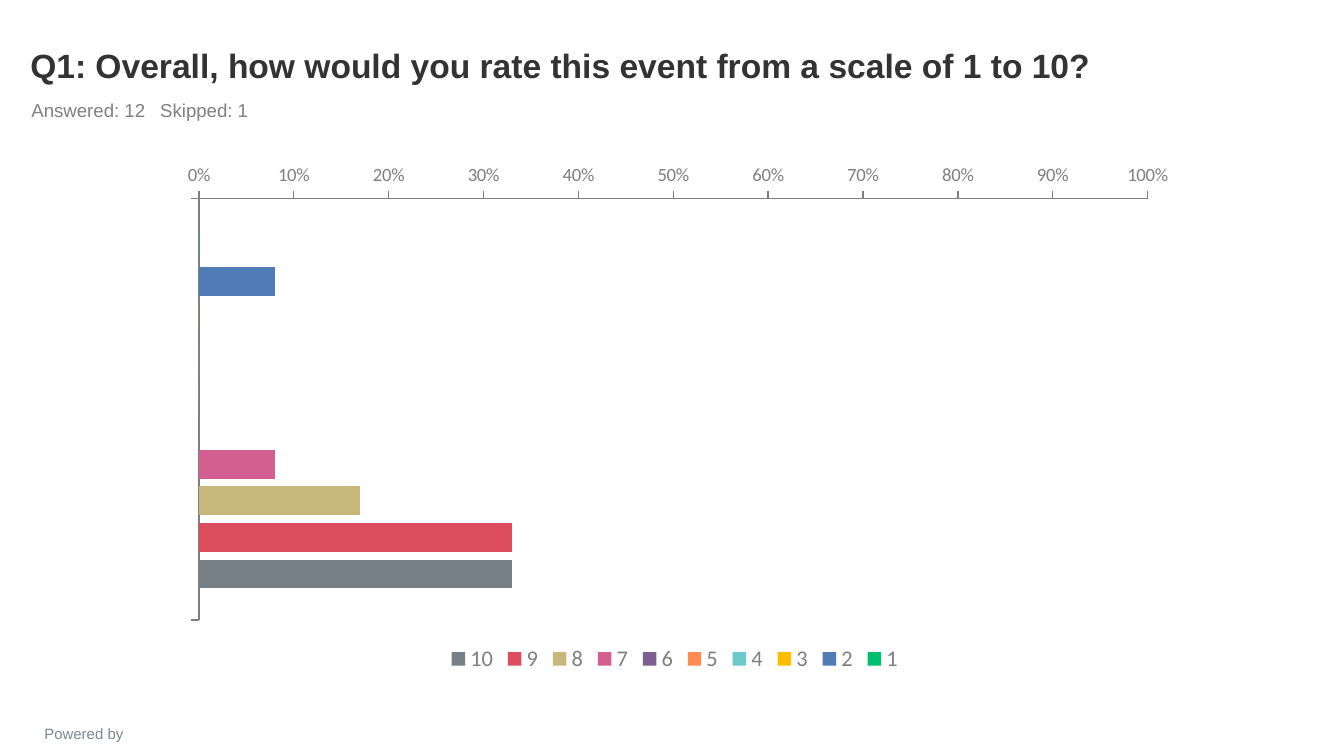
import pptx
import pptx.chart.data
import pptx.dml.color
import pptx.enum.chart
import pptx.enum.text
import pptx.oxml
import pptx.oxml.ns
import pptx.util

SCALE = 9525
COLORS = {
    "title": "333333", "subtitle": "808080", "axis": "7F7F7F", "footer": "7C878E",
    "1": "00BF6F", "2": "507CB6", "3": "F9BE00", "4": "6BC8CD", "5": "FF8B4F",
    "6": "7D5E90", "7": "D25F90", "8": "C7B879", "9": "DB4D5C", "10": "768086",
}
RATINGS = {"2": 0.08, "7": 0.08, "8": 0.17, "9": 0.33, "10": 0.33}


def px(length):
    return pptx.util.Emu(length * SCALE)


def rgb(name):
    return pptx.dml.color.RGBColor.from_string(COLORS[name])


class SurveySlide:
    """Styles and places the elements of a survey result slide."""

    text_font = "Arial"
    chart_font = "Calibri"

    def __init__(self, presentation):
        self.slide = presentation.slides.add_slide(presentation.slide_layouts[5])

    def format_font(self, font, size, color, name, bold=False):
        font.size = pptx.util.Pt(size)
        font.color.rgb = rgb(color)
        font.name = name
        font.bold = bold

    def fill_text(self, shape, text, size, color, align, bold=False, tab=None):
        frame = shape.text_frame
        frame.word_wrap = True
        frame.auto_size = pptx.enum.text.MSO_AUTO_SIZE.NONE
        frame.text = text
        paragraph = frame.paragraphs[0]
        paragraph.alignment = align
        if tab:
            paragraph._p.get_or_add_pPr().append(pptx.oxml.parse_xml(
                f'<a:tabLst {pptx.oxml.ns.nsdecls("a")}>'
                f'<a:tab pos="{px(tab)}" algn="l"/></a:tabLst>'))
        for run in paragraph.runs:
            self.format_font(run.font, size, color, self.text_font, bold)

    def title(self, text, left, top, width, height):
        shape = self.slide.shapes.title
        shape.left, shape.top = px(left), px(top)
        shape.width, shape.height = px(width), px(height)
        shape.text_frame.vertical_anchor = pptx.enum.text.MSO_ANCHOR.BOTTOM
        self.fill_text(shape, text, 18, "title", pptx.enum.text.PP_ALIGN.LEFT, bold=True)

    def text(self, text, box, size, color, align=pptx.enum.text.PP_ALIGN.LEFT, tab=None):
        shape = self.slide.shapes.add_textbox(*map(px, box))
        self.fill_text(shape, text, size, color, align, tab=tab)

    def format_axis(self, axis):
        axis.has_major_gridlines = False
        axis.major_tick_mark = pptx.enum.chart.XL_TICK_MARK.OUTSIDE
        axis.minor_tick_mark = pptx.enum.chart.XL_TICK_MARK.NONE
        axis.format.line.color.rgb = rgb("axis")
        axis.format.line.width = pptx.util.Pt(0.75)
        self.format_font(axis.tick_labels.font, 10, "axis", self.chart_font)

    def bar_chart(self, ratings, box):
        data = pptx.chart.data.CategoryChartData(number_format="0%")
        data.categories = [" "]
        for score in range(1, 11):
            data.add_series(str(score), [ratings.get(str(score), 0)])
        chart = self.slide.shapes.add_chart(
            pptx.enum.chart.XL_CHART_TYPE.BAR_CLUSTERED, *map(px, box), data).chart
        chart.has_title = False
        self.format_font(chart.font, 18, "title", self.chart_font)

        plot = chart.plots[0]
        plot.gap_width = 219
        plot.overlap = -27
        plot.vary_by_categories = False
        for series in plot.series:
            series.format.fill.solid()
            series.format.fill.fore_color.rgb = rgb(series.name)

        category_axis, value_axis = chart.category_axis, chart.value_axis
        self.format_axis(category_axis)
        self.format_axis(value_axis)
        category_axis.reverse_order = True
        category_axis.tick_label_position = pptx.enum.chart.XL_TICK_LABEL_POSITION.LOW
        value_axis.minimum_scale = 0
        value_axis.maximum_scale = 1
        value_axis.major_unit = 0.1
        value_axis.tick_labels.number_format = "0%"
        value_axis.tick_labels.number_format_is_linked = False

        chart.has_legend = True
        chart.legend.position = pptx.enum.chart.XL_LEGEND_POSITION.BOTTOM
        chart.legend.include_in_layout = False
        self.format_font(chart.legend.font, 12, "axis", self.chart_font)


def main():
    presentation = pptx.Presentation()
    presentation.slide_width, presentation.slide_height = px(960), px(540)
    survey = SurveySlide(presentation)
    survey.text("Powered by", (5, 513, 110, 17), 8, "footer",
                pptx.enum.text.PP_ALIGN.CENTER)
    survey.title("Q1: Overall, how would you rate this event from a scale of 1 to 10?",
                 12, 8, 864, 58)
    survey.text("Answered: 12\tSkipped: 1", (13, 66, 864, 25), 10, "subtitle", tab=92)
    survey.bar_chart(RATINGS, (115, 110, 734, 374))
    presentation.save("out.pptx")


if __name__ == "__main__":
    main()
